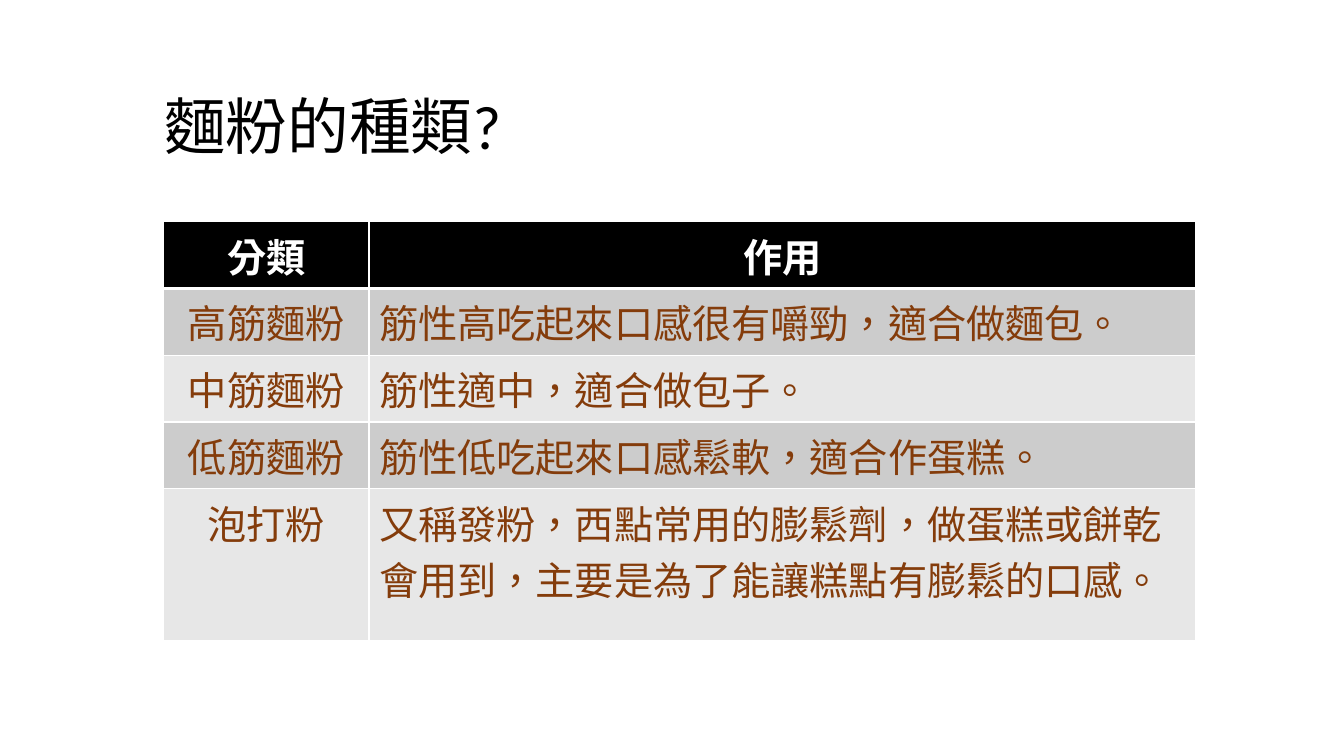
"""Build the slide that lists the kinds of flour and their uses."""
from dataclasses import dataclass

from lxml import etree
from pptx import Presentation
from pptx.dml.color import RGBColor
from pptx.enum.lang import MSO_LANGUAGE_ID
from pptx.enum.text import MSO_ANCHOR, PP_ALIGN
from pptx.oxml.ns import qn
from pptx.util import Pt

CENTER, LEFT = PP_ALIGN.CENTER, PP_ALIGN.LEFT
MIDDLE = MSO_ANCHOR.MIDDLE
CHINESE = MSO_LANGUAGE_ID.TRADITIONAL_CHINESE
EMU_PER_PX = 9144
FONT = "Calibri"
BLACK, WHITE, BROWN = "000000", "FFFFFF", "843C0B"
BANDS = ("CCCCCC", "E7E7E7")
COLUMN_WIDTHS = (204, 820)


@dataclass(frozen=True)
class Row:
    kind: str
    use: str
    height: int = 57


HEADER = Row("分類", "作用")
FLOURS = (
    Row("高筋麵粉", "筋性高吃起來口感很有嚼勁，適合做麵包。"),
    Row("中筋麵粉", "筋性適中，適合做包子。"),
    Row("低筋麵粉", "筋性低吃起來口感鬆軟，適合作蛋糕。", 61),
    Row("泡打粉", "又稱發粉，西點常用的膨鬆劑，做蛋糕或餅乾會用到，主要是為了能讓糕點有膨鬆的口感。", 151),
)


def px(n: int) -> int:
    return n * EMU_PER_PX


def color(value: str) -> RGBColor:
    return RGBColor.from_string(value)


def write(tf, text: str, *, size: int, ink: str, bold: bool = False,
          align=LEFT, spacing: float = 1.0) -> None:
    p = tf.paragraphs[0]
    p.alignment = align
    p.line_spacing = spacing
    r = p.add_run()
    r.text = text
    r.font.name = FONT
    r.font.size = Pt(size)
    r.font.bold = bold
    r.font.color.rgb = color(ink)
    r.font.language_id = CHINESE


def add_borders(cell, top: int, bottom: int) -> None:
    tc_pr = cell._tc.get_or_add_tcPr()
    for side, width in (("L", 1), ("R", 1), ("T", top), ("B", bottom)):
        ln = etree.SubElement(tc_pr, qn(f"a:ln{side}"), w=str(Pt(width)))
        fill = etree.SubElement(ln, qn("a:solidFill"))
        etree.SubElement(fill, qn("a:srgbClr"), val=WHITE)


def add_title(s) -> None:
    sp = s.shapes.title
    sp.left, sp.top, sp.width, sp.height = map(px, (153, 56, 1047, 145))
    tf = sp.text_frame
    tf.word_wrap = True
    tf.vertical_anchor = MIDDLE
    write(tf, "麵粉的種類?", size=44, ink=BLACK, spacing=0.9)


def add_flour_table(s) -> None:
    rows = (HEADER, *FLOURS)
    height = sum(row.height for row in rows)
    table = s.shapes.add_table(len(rows), len(COLUMN_WIDTHS), px(162), px(220),
                               px(sum(COLUMN_WIDTHS)), px(height)).table
    for column, width in zip(table.columns, COLUMN_WIDTHS):
        column.width = px(width)
    for i, row in enumerate(rows):
        table.rows[i].height = px(row.height)
        is_header = i == 0
        for j, text in enumerate((row.kind, row.use)):
            cell = table.cell(i, j)
            add_borders(cell, top=3 if i == 1 else 1, bottom=3 if is_header else 1)
            cell.fill.solid()
            cell.fill.fore_color.rgb = color(BLACK if is_header else BANDS[(i - 1) % 2])
            write(cell.text_frame, text, size=28, bold=is_header,
                  ink=WHITE if is_header else BROWN,
                  align=CENTER if is_header or j == 0 else LEFT)


def main() -> None:
    prs = Presentation()
    prs.slide_width, prs.slide_height = px(1333), px(750)
    s = prs.slides.add_slide(prs.slide_layouts[5])
    add_title(s)
    add_flour_table(s)
    prs.save("out.pptx")


if __name__ == "__main__":
    main()
